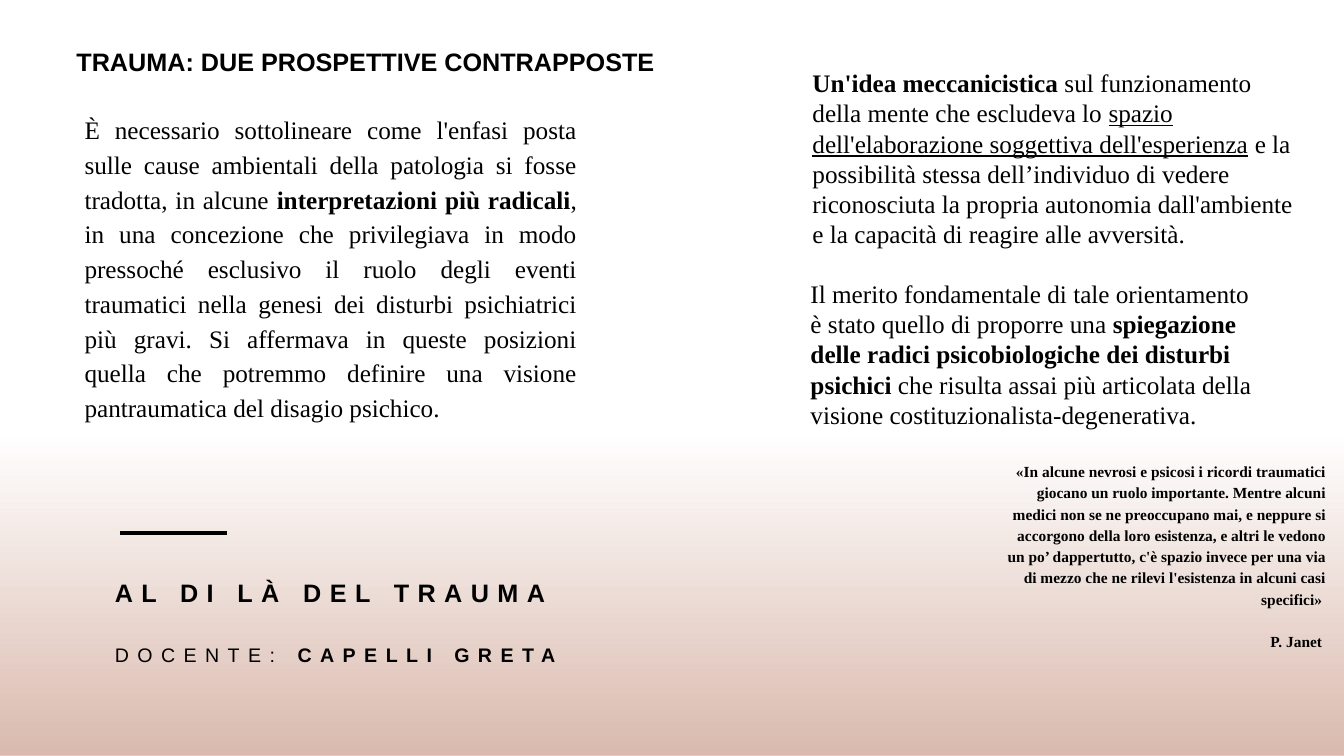
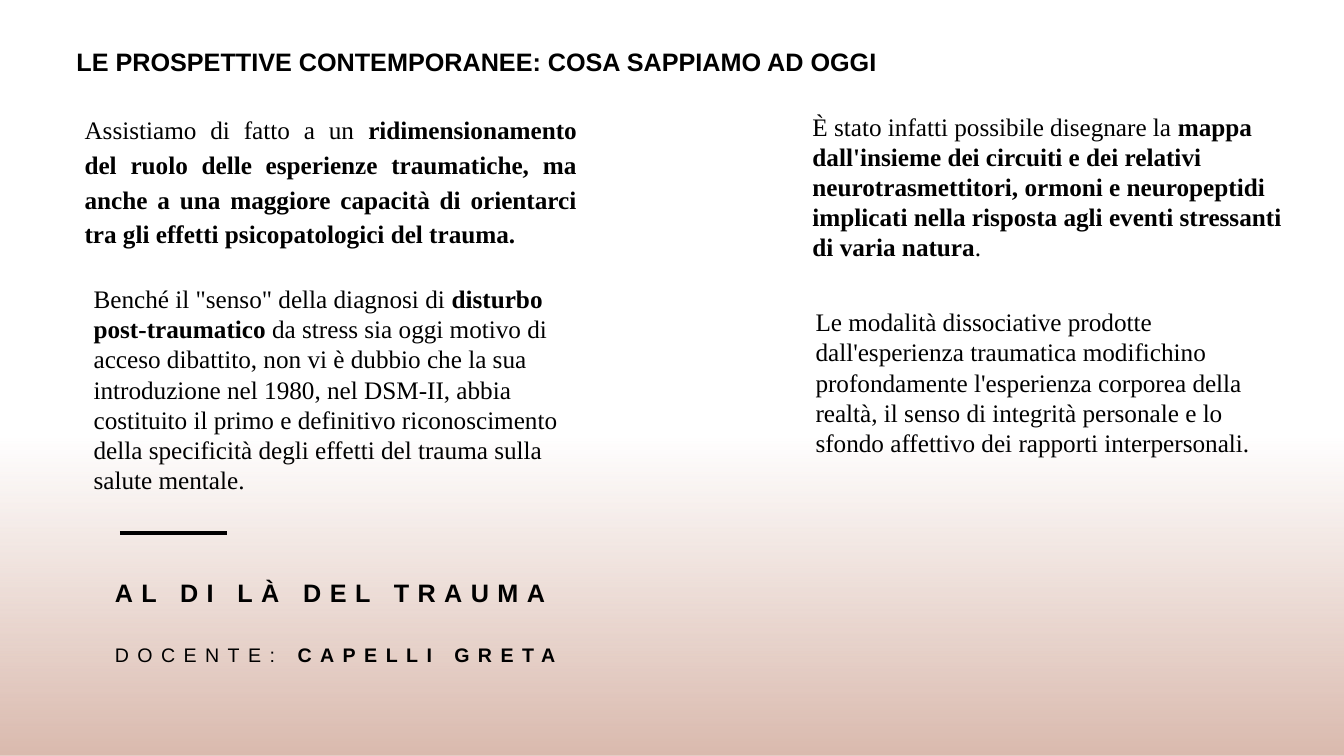
from lxml.etree import SubElement
from pptx import Presentation
from pptx.dml.color import RGBColor
from pptx.enum.shapes import MSO_CONNECTOR as CONNECTOR, MSO_SHAPE as SHAPE
from pptx.enum.text import MSO_AUTO_SIZE as AUTO_SIZE, PP_ALIGN as ALIGN
from pptx.oxml.ns import qn
from pptx.util import Inches, Pt

BLACK = RGBColor(0x00, 0x00, 0x00)
ROSE = RGBColor(0xDA, 0xBA, 0xAE)

HEADING = {"name": "Arial", "size": Pt(18), "bold": True}
TEACHER = {"name": "Arial", "size": Pt(14)}
BODY = {"name": "Times New Roman", "size": Pt(18)}
QUOTE = {"name": "Times New Roman", "size": Pt(11), "bold": True}
BOLD = {"bold": True}
UNDERLINE = {"underline": True}

PLAIN = {}
JUSTIFIED = {"alignment": ALIGN.JUSTIFY, "line_spacing": 1.15}
QUOTED = {"alignment": ALIGN.RIGHT, "line_spacing": 1.15}
SIGNED = {**QUOTED, "space_before": Pt(15)}
COURSE = {"line_spacing": 1.2}
COURSE_TEACHER = {"line_spacing": 1.2, "space_before": Pt(22)}

# Each text block: box (left, top, width, height), then its paragraphs as
# (paragraph format, font, runs); each run is (text, font changes).
COURSE_BLOCK = (
    (1.04, 5.62, 9.7, 1.2),
    [
        (COURSE, HEADING, [("AL DI LÀ DEL TRAUMA", {})]),
        (COURSE_TEACHER, TEACHER, [("DOCENTE: ", {}), ("CAPELLI GRETA", BOLD)]),
    ],
)

SLIDES = [
    (
        "TRAUMA: DUE PROSPETTIVE CONTRAPPOSTE",
        [
            ((0.74, 1.04, 5.08, 3.24), [(JUSTIFIED, BODY, [
                ("È necessario sottolineare come l'enfasi posta sulle cause ambientali "
                 "della patologia si fosse tradotta, in alcune ", {}),
                ("interpretazioni più radicali", BOLD),
                (", in una concezione che privilegiava in modo pressoché esclusivo il "
                 "ruolo degli eventi traumatici nella genesi dei disturbi psichiatrici "
                 "più gravi. Si affermava in queste posizioni quella che potremmo "
                 "definire una visione pantraumatica del disagio psichico.", {}),
            ])]),
            ((7.96, 0.62, 5.08, 1.92), [(PLAIN, BODY, [
                ("Un'idea meccanicistica", BOLD),
                (" sul funzionamento della mente che escludeva lo ", {}),
                ("spazio dell'elaborazione soggettiva dell'esperienza", UNDERLINE),
                (" e la possibilità stessa dell’individuo di vedere riconosciuta la "
                 "propria autonomia dall'ambiente e la capacità di reagire alle "
                 "avversità.", {}),
            ])]),
            ((7.94, 2.71, 4.65, 1.62), [(PLAIN, BODY, [
                ("Il merito fondamentale di tale orientamento è stato quello di "
                 "proporre una ", {}),
                ("spiegazione delle radici psicobiologiche dei disturbi psichici", BOLD),
                (" che risulta assai più articolata della visione "
                 "costituzionalista-degenerativa.", {}),
            ])]),
            ((9.87, 4.51, 3.38, 2.85), [
                (QUOTED, QUOTE, [
                    ("«In alcune nevrosi e psicosi i ricordi traumatici giocano un ruolo "
                     "importante. Mentre alcuni medici non se ne preoccupano mai, e "
                     "neppure si accorgono della loro esistenza, e altri le vedono un "
                     "po’ dappertutto, c'è spazio invece per una via di mezzo che ne "
                     "rilevi l'esistenza in alcuni casi specifici» ", {}),
                ]),
                (SIGNED, QUOTE, [("P. Janet ", {})]),
            ]),
        ],
    ),
    (
        "LE PROSPETTIVE CONTEMPORANEE: COSA SAPPIAMO AD OGGI",
        [
            ((0.74, 1.04, 5.08, 1.48), [(JUSTIFIED, BODY, [
                ("Assistiamo di fatto a un ", {}),
                ("ridimensionamento del ruolo delle esperienze traumatiche, ma anche a "
                 "una maggiore capacità di orientarci tra gli effetti psicopatologici "
                 "del trauma.", BOLD),
            ])]),
            ((7.96, 1.05, 5.08, 1.62), [(PLAIN, BODY, [
                ("È stato infatti possibile disegnare la ", {}),
                ("mappa dall'insieme dei circuiti e dei relativi neurotrasmettitori, "
                 "ormoni e neuropeptidi implicati nella risposta agli eventi stressanti "
                 "di varia natura", BOLD),
                (".", {}),
            ])]),
            ((0.83, 2.76, 4.99, 2.22), [(PLAIN, BODY, [
                ('Benché il "senso" della diagnosi di ', {}),
                ("disturbo post-traumatico ", BOLD),
                ("da stress sia oggi motivo di acceso dibattito, non vi è dubbio che la "
                 "sua introduzione nel 1980, nel DSM-II, abbia costituito il primo e "
                 "definitivo riconoscimento della specificità degli effetti del trauma "
                 "sulla salute mentale.", {}),
            ])]),
            ((7.99, 2.99, 4.51, 1.62), [(PLAIN, BODY, [
                ("Le modalità dissociative prodotte dall'esperienza traumatica "
                 "modifichino profondamente l'esperienza corporea della realtà, il "
                 "senso di integrità personale e lo sfondo affettivo dei rapporti "
                 "interpersonali.", {}),
            ])]),
        ],
    ),
]


def add_text(s, box, paragraphs, tracking=0):
    """Add a wrapping text box; tracking is letter spacing in points."""
    tf = s.shapes.add_textbox(*map(Inches, box)).text_frame
    tf.word_wrap = True
    tf.auto_size = AUTO_SIZE.NONE if tracking else AUTO_SIZE.SHAPE_TO_FIT_TEXT
    for i, (layout, font, runs) in enumerate(paragraphs):
        p = tf.add_paragraph() if i else tf.paragraphs[0]
        for key, value in layout.items():
            setattr(p, key, value)
        for text, changes in runs:
            r = p.add_run()
            r.text = text
            r.font.color.rgb = BLACK
            for key, value in {**font, **changes}.items():
                setattr(r.font, key, value)
            if tracking:
                r.font._element.set("spc", str(tracking * 100))


def add_backdrop(s):
    """Add the band fading up from rose to clear, and the short rule."""
    band = s.shapes.add_shape(SHAPE.RECTANGLE, 0, Inches(3.84), prs.slide_width, Inches(3.66))
    band.shadow.inherit = False
    band.line.fill.background()
    band.fill.gradient()
    band.fill.gradient_angle = 270
    for stop, position in zip(band.fill.gradient_stops, (0.14, 1)):
        stop.position = position
        stop.color.rgb = ROSE
    clear = band._element.xpath(".//a:gs/a:srgbClr")[0]
    SubElement(clear, qn("a:alpha")).set("val", "0")

    rule = s.shapes.add_connector(
        CONNECTOR.STRAIGHT, Inches(1.19), Inches(5.29), Inches(2.25), Inches(5.29))
    rule.line.color.rgb = BLACK
    rule.line.width = Pt(2.5)
    SubElement(rule._element.spPr, qn("a:effectLst"))


prs = Presentation()
prs.slide_width, prs.slide_height = Inches(13.33), Inches(7.5)

for heading, blocks in SLIDES:
    s = prs.slides.add_slide(prs.slide_layouts[6])
    add_backdrop(s)
    add_text(s, *COURSE_BLOCK, tracking=6)
    add_text(s, (0.66, 0.37, 8.94, 0.43), [(JUSTIFIED, HEADING, [(heading, {})])])
    for box, paragraphs in blocks:
        add_text(s, box, paragraphs)

prs.save("out.pptx")
